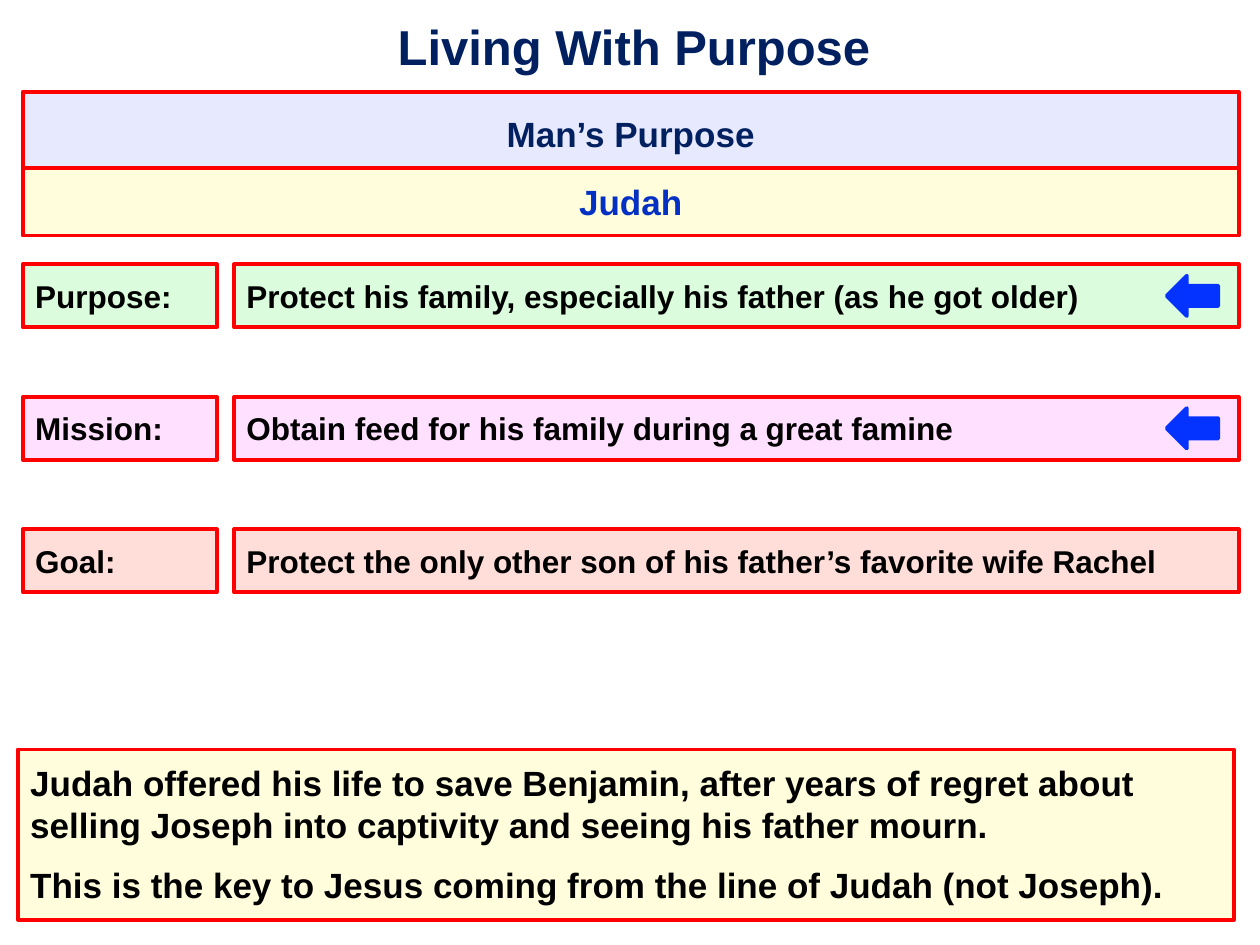
from lxml.etree import SubElement
from pptx import Presentation
from pptx.dml.color import RGBColor
from pptx.enum.shapes import MSO_SHAPE
from pptx.enum.text import MSO_ANCHOR, PP_ALIGN
from pptx.oxml.ns import qn
from pptx.util import Cm, Pt

TITLE = "Living With Purpose"
HEADING = "Man’s Purpose"
PERSON = "Judah"
ROWS = [
    ("Purpose:", "Protect his family, especially his father (as he got older)", "73FB79", 25, True),
    ("Mission:", "Obtain feed for his family during a great famine", "FF85FF", 25, True),
    ("Goal:", "Protect the only other son of his father’s favorite wife Rachel", "FF2600", 15, False),
]
SUMMARY = [
    "Judah offered his life to save Benjamin, after years of regret about "
    "selling Joseph into captivity and seeing his father mourn.",
    "This is the key to Jesus coming from the line of Judah (not Joseph).",
]

RED, BLUE, NAVY, CREAM = "FF0000", "0432FF", "002060", "FFFDB8"
LEFT, WIDTH = 0.46, 24.51
ROW_TOP, ROW_PITCH, ROW_HEIGHT = 5.33, 2.67, 1.27
LABEL_WIDTH, GAP = 3.91, 0.35
ARROW_WIDTH, ARROW_HEIGHT, ARROW_INSET = 1.04, 0.81, 0.41


def rgb(value):
    return RGBColor.from_string(value)


def write(tf, paragraphs, size=18, color="000000", align=PP_ALIGN.LEFT, spacing=1.0,
          gap=0, anchor=MSO_ANCHOR.TOP, margin=0.25):
    tf.word_wrap = True
    tf.vertical_anchor = anchor
    tf.margin_left = tf.margin_right = tf.margin_top = tf.margin_bottom = Cm(margin)
    for i, text in enumerate(paragraphs):
        p = tf.paragraphs[0] if i == 0 else tf.add_paragraph()
        p.alignment = align
        p.line_spacing = spacing
        p.space_before = Pt(gap if i else 0)
        r = p.add_run()
        r.text = text
        r.font.name = "Arial"
        r.font.size = Pt(size)
        r.font.bold = True
        r.font.color.rgb = rgb(color)


def add_shape(s, kind, x, y, w, h, fill, line, opacity=100):
    sp = s.shapes.add_shape(kind, Cm(x), Cm(y), Cm(w), Cm(h))
    sp.shadow.inherit = False
    sp.fill.solid()
    sp.fill.fore_color.rgb = rgb(fill)
    sp.line.color.rgb = rgb(line)
    sp.line.width = Pt(2.25)
    if opacity < 100:
        clr = sp.fill._xPr.find(qn("a:solidFill"))[0]
        SubElement(clr, qn("a:alpha"), val=str(opacity * 1000))
    return sp


def add_box(s, x, y, w, h, fill, opacity, paragraphs, **fmt):
    sp = add_shape(s, MSO_SHAPE.RECTANGLE, x, y, w, h, fill, RED, opacity)
    write(sp.text_frame, paragraphs, **fmt)


def main():
    prs = Presentation()
    prs.slide_width, prs.slide_height = Cm(25.4), Cm(19.05)
    s = prs.slides.add_slide(prs.slide_layouts[5])

    title = s.shapes.title
    title.left, title.top, title.width, title.height = Cm(0.36), Cm(0.05), Cm(24.84), Cm(1.75)
    write(title.text_frame, [TITLE], size=28, color=NAVY, align=PP_ALIGN.CENTER,
          anchor=MSO_ANCHOR.MIDDLE, margin=0.15)

    add_box(s, LEFT, 1.85, WIDTH, 1.53, "D0D6FF", 50, [HEADING],
            size=20, color=NAVY, align=PP_ALIGN.CENTER, spacing=1.2)
    add_box(s, LEFT, 3.38, WIDTH, 1.37, CREAM, 50, [PERSON],
            size=20, color="0530C4", align=PP_ALIGN.CENTER)

    right = LEFT + WIDTH
    text_left = LEFT + LABEL_WIDTH + GAP
    for i, (label, text, fill, opacity, arrow) in enumerate(ROWS):
        y = ROW_TOP + i * ROW_PITCH
        add_box(s, LEFT, y, LABEL_WIDTH, ROW_HEIGHT, fill, opacity, [label])
        add_box(s, text_left, y, right - text_left, ROW_HEIGHT, fill, opacity, [text])
        if arrow:
            add_shape(s, MSO_SHAPE.LEFT_ARROW, right - ARROW_INSET - ARROW_WIDTH,
                      y + (ROW_HEIGHT - ARROW_HEIGHT) / 2, ARROW_WIDTH, ARROW_HEIGHT, BLUE, BLUE)

    add_box(s, 0.36, 15.11, WIDTH, 3.43, CREAM, 50, SUMMARY, size=20, gap=10)
    prs.save("out.pptx")


if __name__ == "__main__":
    main()
